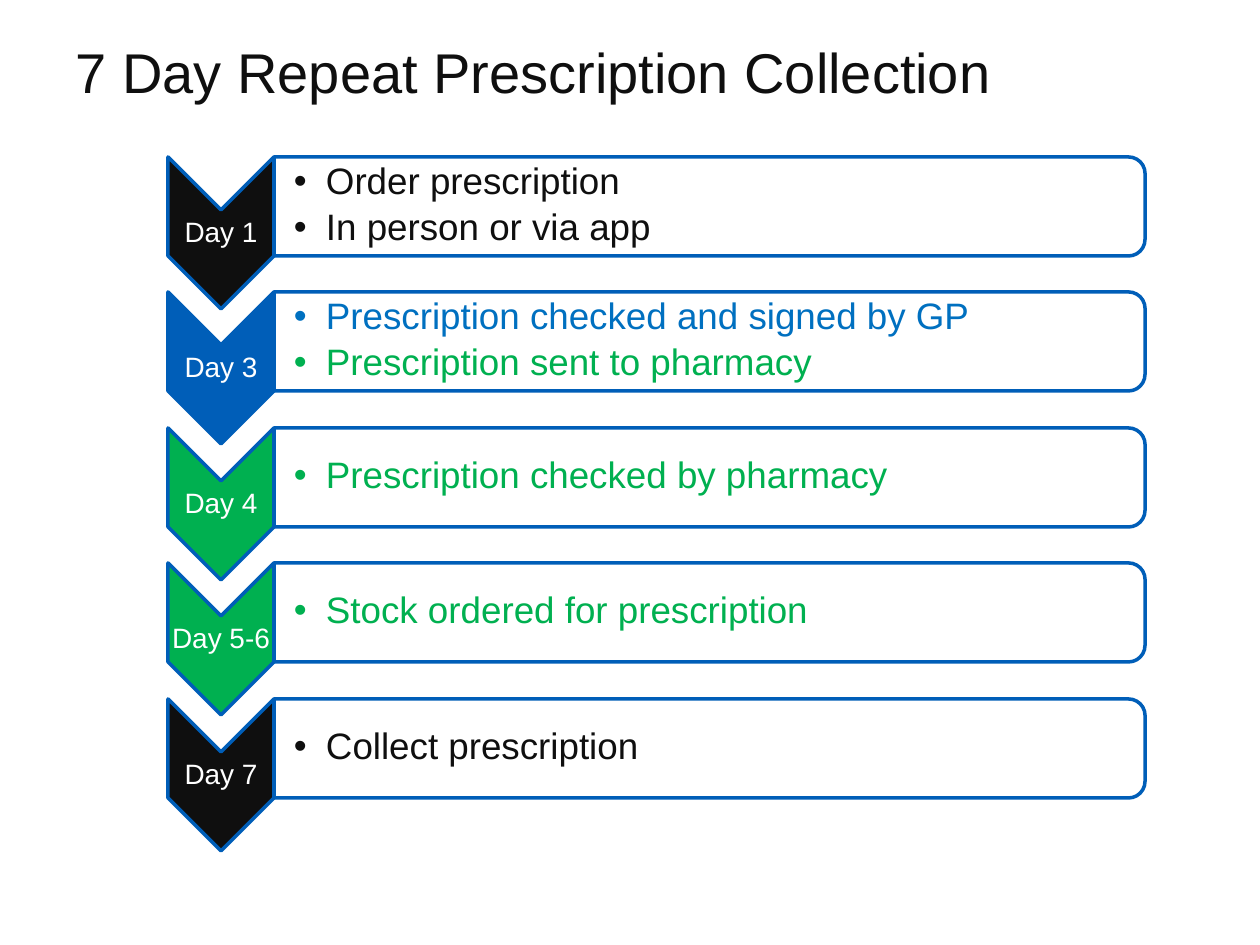
import pptx
import pptx.dml.color
import pptx.enum.shapes
import pptx.enum.text
import pptx.util
from lxml import etree
from pptx.oxml import ns

RGB = pptx.dml.color.RGBColor
BLACK = RGB(0x0F, 0x0F, 0x0F)
BLUE = RGB(0x00, 0x5E, 0xB8)
LIGHT_BLUE = RGB(0x00, 0x70, 0xC0)
GREEN = RGB(0x00, 0xB0, 0x50)
WHITE = RGB(0xFF, 0xFF, 0xFF)

SHAPE = pptx.enum.shapes.MSO_SHAPE
ALIGN = pptx.enum.text.PP_ALIGN
ANCHOR = pptx.enum.text.MSO_ANCHOR
Pt = pptx.util.Pt

PX_PER_INCH = 126
FIRST_TOP, LAST_TOP = 157, 699
ARROW_LEFT, ARROW_W, ARROW_H = 168, 106, 152
BOX_LEFT, BOX_W, BOX_H = ARROW_LEFT + ARROW_W, 871, 99

STEPS = [
    ("Day 1", BLACK, [("Order prescription", BLACK), ("In person or via app", BLACK)]),
    ("Day 3", BLUE, [("Prescription checked and signed by GP", LIGHT_BLUE),
                     ("Prescription sent to pharmacy", GREEN)]),
    ("Day 4", GREEN, [("Prescription checked by pharmacy", GREEN)]),
    ("Day 5-6", GREEN, [("Stock ordered for prescription", GREEN)]),
    ("Day 7", BLACK, [("Collect prescription", BLACK)]),
]

prs = pptx.Presentation()


def px(*lengths):
    return [round(n * 914400 / PX_PER_INCH) for n in lengths]


def format_text(p, size, color):
    font = p.runs[0].font
    font.name, font.size, font.color.rgb = "Arial", Pt(size), color


prs.slide_width, prs.slide_height = px(1260, 945)
s = prs.slides.add_slide(prs.slide_layouts[5])

title = s.shapes.title
title.left, title.top, title.width, title.height = px(63, 31, 1061, 81)
tf = title.text_frame
tf.text = "7 Day Repeat Prescription Collection"
tf.vertical_anchor = ANCHOR.TOP
tf.paragraphs[0].alignment = ALIGN.LEFT
format_text(tf.paragraphs[0], 32, BLACK)

for i, (day, day_color, items) in enumerate(STEPS):
    top = FIRST_TOP + (LAST_TOP - FIRST_TOP) * i // (len(STEPS) - 1)

    # Both shapes are turned a quarter, so width and height swap about the centre
    for kind, left, w, h, color in [
        (SHAPE.CHEVRON, ARROW_LEFT, ARROW_W, ARROW_H, day_color),
        (SHAPE.ROUND_2_SAME_RECTANGLE, BOX_LEFT, BOX_W, BOX_H, WHITE),
    ]:
        shift = (w - h) // 2
        sp = s.shapes.add_shape(kind, *px(left + shift, top - shift, h, w))
        sp.rotation = 90
        sp.shadow.inherit = False
        sp.fill.solid()
        sp.fill.fore_color.rgb = color
        sp.line.color.rgb = BLUE
        sp.line.width = Pt(2)
    # The last shape is the box: make its white fill 90% opaque
    srgb = sp.fill._xPr.find(ns.qn("a:solidFill"))[0]
    etree.SubElement(srgb, ns.qn("a:alpha"), val="90000")

    label = s.shapes.add_textbox(*px(ARROW_LEFT, top + 53, ARROW_W, 46))
    details = s.shapes.add_textbox(*px(BOX_LEFT, top + 5, 866, 88))
    for box, inset in [(label, 1), (details, 20)]:
        tf = box.text_frame
        tf.word_wrap = True
        tf.vertical_anchor = ANCHOR.MIDDLE
        tf.margin_left, tf.margin_right, tf.margin_top, tf.margin_bottom = px(inset, 1, 1, 1)

    p = label.text_frame.paragraphs[0]
    p.text = day
    p.alignment = ALIGN.CENTER
    p.line_spacing = 0.9
    format_text(p, 16, WHITE)

    tf = details.text_frame
    tf.text = "\n".join(text for text, color in items)
    for p, (text, color) in zip(tf.paragraphs, items):
        p.line_spacing = 0.9
        p.space_after = Pt(3.6)
        format_text(p, 21, color)
        pPr = p._p.get_or_add_pPr()
        indent = px(32)[0]
        pPr.set("marL", str(indent))
        pPr.set("indent", str(-indent))
        etree.SubElement(pPr, ns.qn("a:buFont"), typeface="Arial")
        etree.SubElement(pPr, ns.qn("a:buChar"), char="•")

prs.save("out.pptx")
